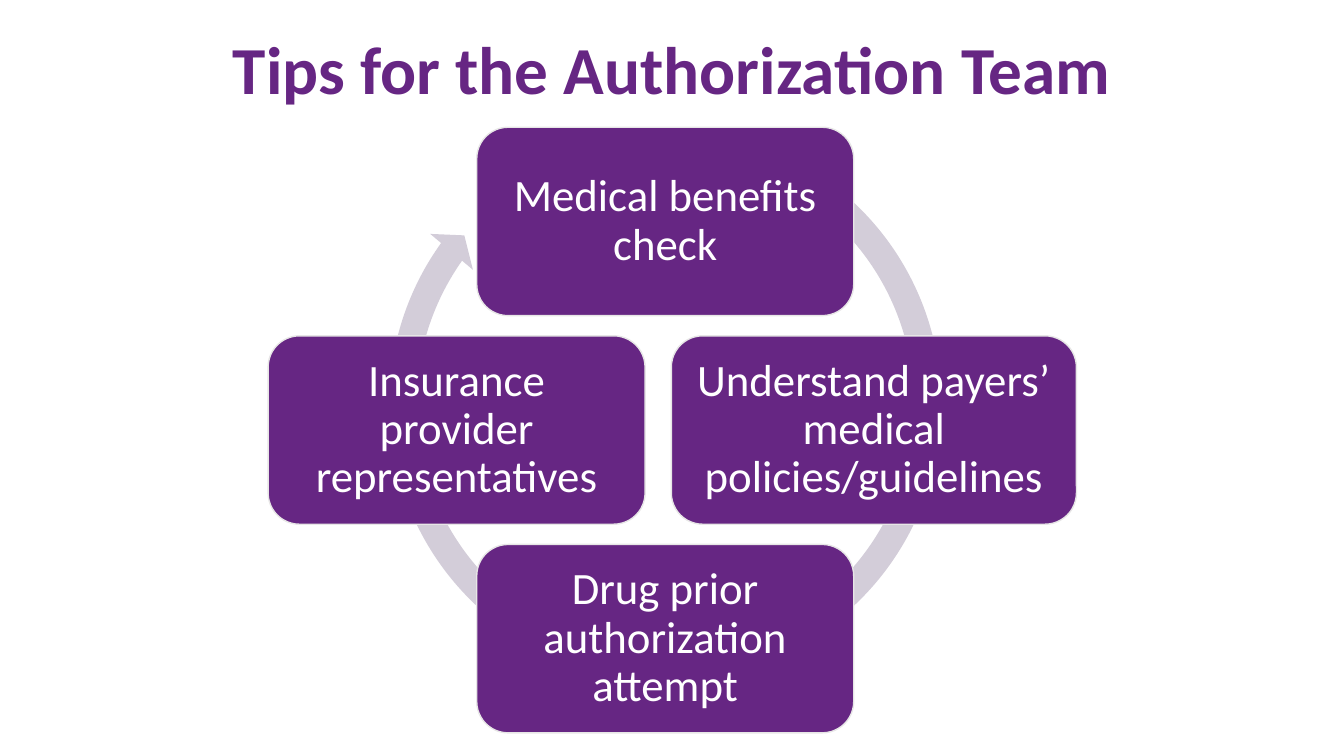
import pptx
import pptx.util
import pptx.dml.color
import pptx.enum.shapes
import pptx.enum.text

Pt = pptx.util.Pt
Shape = pptx.enum.shapes.MSO_SHAPE
COLORS = {"purple": "662683", "arrow": "D3CDD9", "outline": "E7E6E6", "white": "FFFFFF"}


def color(name):
    return pptx.dml.color.RGBColor.from_string(COLORS[name])


def write_text(shape, text, margin, size, bold, font_color):
    frame = shape.text_frame
    frame.text = text
    frame_format = {
        "word_wrap": True,
        "auto_size": pptx.enum.text.MSO_AUTO_SIZE.NONE,
        "vertical_anchor": pptx.enum.text.MSO_ANCHOR.MIDDLE,
        "margin_left": margin,
        "margin_right": margin,
        "margin_top": margin,
        "margin_bottom": margin,
    }
    for name, value in frame_format.items():
        setattr(frame, name, value)
    paragraph = frame.paragraphs[0]
    paragraph.alignment = pptx.enum.text.PP_ALIGN.CENTER
    paragraph.line_spacing = 0.9
    font = paragraph.runs[0].font
    for name, value in {"name": "Calibri", "size": size, "bold": bold}.items():
        setattr(font, name, value)
    font.color.rgb = color(font_color)


presentation = pptx.Presentation()
presentation.slide_width = Pt(960)
presentation.slide_height = Pt(540)
slide = presentation.slides.add_slide(presentation.slide_layouts[5])

title = slide.shapes.title
title_place = {"left": Pt(66), "top": Pt(0), "width": Pt(828), "height": Pt(104.4)}
for name, value in title_place.items():
    setattr(title, name, value)
write_text(title, "Tips for the Authorization Team", Pt(4), Pt(48), True, "purple")

center_x, center_y, radius = 475.2, 307.2, 149
arrow_size = 414.7
box_width, wide_box_width, box_height = 269.3, 289.4, 134.6

arrow = slide.shapes.add_shape(
    Shape.CIRCULAR_ARROW, Pt(center_x - arrow_size / 2), Pt(81.4), Pt(arrow_size), Pt(arrow_size)
)
for index, value in enumerate([0.047, 2.729, 129.298, 179.641, 0.048]):
    arrow.adjustments[index] = value
arrow.shadow.inherit = False
arrow.fill.solid()
arrow.fill.fore_color.rgb = color("arrow")
arrow.line.fill.background()

tips = [
    ("Medical benefits check", 0, -1, box_width),
    ("Understand payers’ medical policies/guidelines", 1, 0, wide_box_width),
    ("Drug prior authorization attempt", 0, 1, box_width),
    ("Insurance provider representatives", -1, 0, box_width),
]
for text, across, down, width in tips:
    tip = slide.shapes.add_shape(
        Shape.ROUNDED_RECTANGLE,
        Pt(center_x + across * radius - width / 2),
        Pt(center_y + down * radius - box_height / 2),
        Pt(width),
        Pt(box_height),
    )
    tip.shadow.inherit = False
    tip.fill.solid()
    tip.fill.fore_color.rgb = color("purple")
    tip.line.color.rgb = color("outline")
    tip.line.width = Pt(1)
    write_text(tip, text, Pt(9.4), Pt(32), False, "white")

presentation.save("out.pptx")
